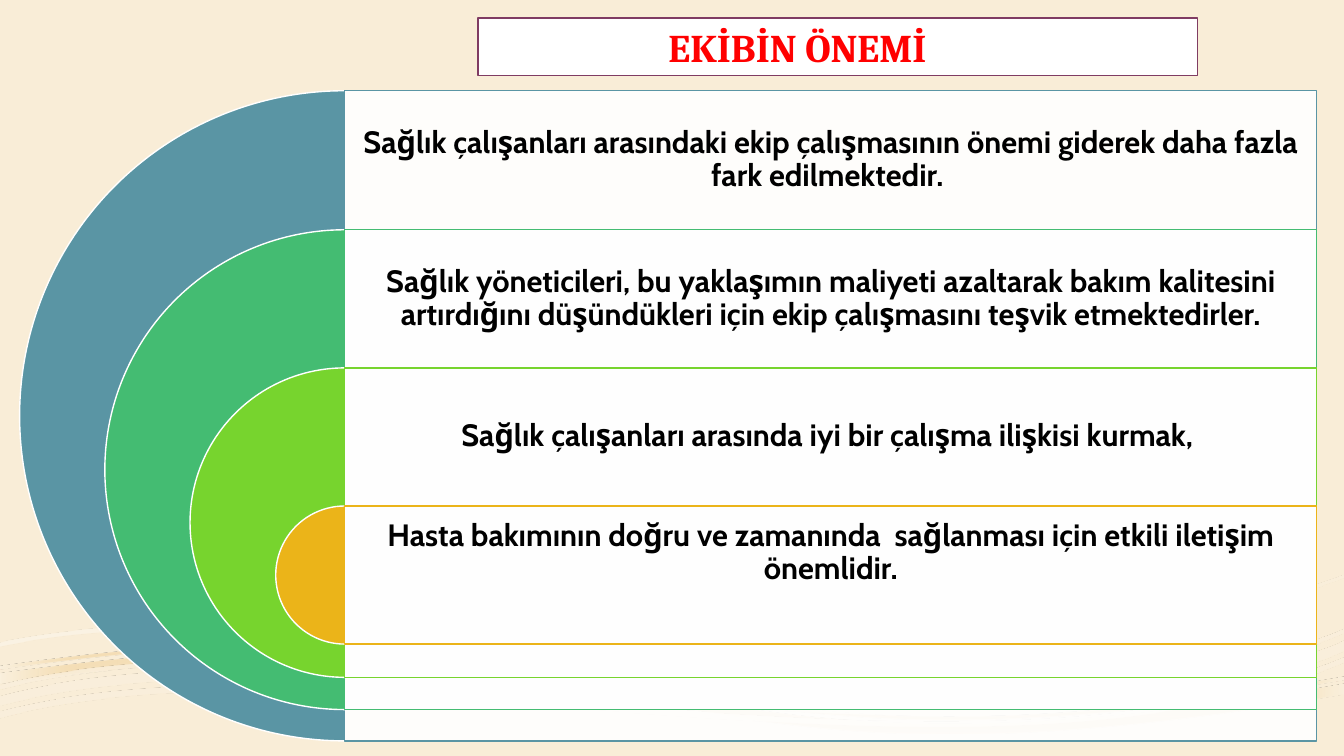
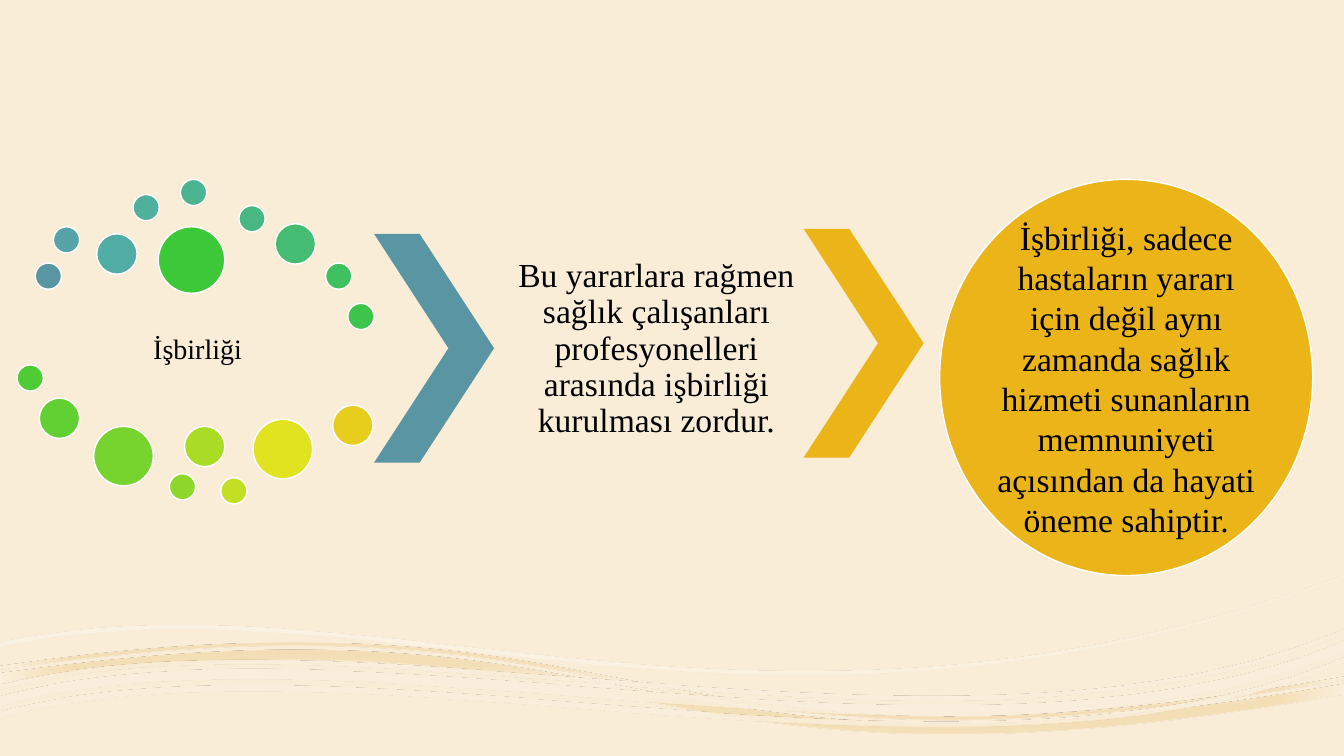
"""Build two slides on teamwork and its value in health care."""
from dataclasses import dataclass
from math import cos, radians, sin

from lxml import etree
from pptx import Presentation
from pptx.dml.color import RGBColor
from pptx.enum.shapes import MSO_SHAPE
from pptx.enum.text import MSO_ANCHOR, PP_ALIGN
from pptx.oxml import parse_xml
from pptx.oxml.ns import nsdecls, qn
from pptx.util import Pt

PX = 9144
TILT = 3.5
RECT, PIE = MSO_SHAPE.RECTANGLE, MSO_SHAPE.PIE
OVAL, CHEVRON = MSO_SHAPE.OVAL, MSO_SHAPE.CHEVRON
LEFT, CENTER = PP_ALIGN.LEFT, PP_ALIGN.CENTER
MIDDLE = MSO_ANCHOR.MIDDLE


@dataclass(frozen=True)
class Theme:
    """Hold the colours, fonts and type sizes."""
    sand: str = "F9EDD7"
    white: str = "FFFFFF"
    black: str = "000000"
    red: str = "FF0000"
    plum: str = "803C63"
    teal: str = "5A95A4"
    green: str = "44BC72"
    lime: str = "77D42E"
    gold: str = "EBB419"
    head: str = "Cambria"
    body: str = "Cabin"
    serif: str = "Times New Roman"
    title: int = 28
    large: int = 24
    main: int = 22
    small: int = 20


T = Theme()

WAVES = [
    ((1, 612, 1331, 135),
     [[(306, 645), (670, 647, 738, 782, 1333, 678), (1333, 688),
       (602, 816, 667, 583, 0, 678), (0, 668), (124, 651, 222, 644, 306, 645)],
      [(306, 638), (670, 640, 738, 775, 1333, 671), (1333, 674),
       (602, 802, 667, 569, 0, 664), (0, 661), (124, 643, 222, 637, 306, 638)]],
     [(0, "FAF1DF", 90), (18, "F4DEB7", 100), (37, "F4DDB3", 90), (100, "FAF1DF", 100)],
     '<a:path path="shape"><a:fillToRect l="50000" t="50000" r="50000" b="50000"/></a:path>'),
    ((3, 588, 1335, 171),
     [[(1333, 570), (1333, 573), (754, 788, 373, 563, 0, 641), (0, 637),
       (373, 559, 754, 784, 1333, 570)]],
     [(36, T.white, 30), (100, T.sand, 48)],
     '<a:lin ang="2700000" scaled="0"/>'),
    ((-1, 625, 1336, 115),
     [[(1333, 652), (1333, 657), (955, 815, 349, 618, 0, 712), (0, 706),
       (349, 612, 955, 810, 1333, 652)],
      [(1333, 636), (1333, 646), (955, 804, 349, 606, 0, 700), (0, 691),
       (349, 596, 955, 794, 1333, 636)],
      [(1333, 624), (1333, 628), (958, 790, 351, 593, 0, 684), (0, 680),
       (351, 589, 958, 786, 1333, 624)]],
     [(36, T.white, 47), (100, "FAEFDC", 82)],
     '<a:path path="rect"><a:fillToRect l="100000" t="100000"/></a:path>'),
]

RINGS = [
    (90, 645, T.teal, "Sağlık çalışanları arasındaki ekip çalışmasının önemi giderek "
                      "daha fazla fark edilmektedir. ", 9),
    (228, 476, T.green, "Sağlık yöneticileri, bu yaklaşımın maliyeti azaltarak bakım "
                        "kalitesini artırdığını düşündükleri için ekip çalışmasını "
                        "teşvik etmektedirler.", 9),
    (365, 307, T.lime, "Sağlık çalışanları arasında iyi bir çalışma ilişkisi kurmak, ", 9),
    (502, 137, T.gold, "Hasta bakımının doğru ve zamanında  sağlanması için etkili "
                       "iletişim önemlidir.", 52),
]

DOTS = [
    (35, 261, 26, T.teal), (53, 225, 26, "56A3A8"), (96, 232, 40, "52ACA6"),
    (132, 193, 26, "4FB09C"), (179, 178, 26, "4BB490"), (237, 204, 26, "47B882"),
    (273, 222, 40, T.green), (323, 261, 26, "40C05F"), (345, 301, 26, "3DC44B"),
    (157, 225, 66, "3DC839"), (17, 362, 26, "4ECC35"), (39, 395, 40, "62D032"),
    (93, 423, 59, T.lime), (168, 470, 26, "8FD82B"), (183, 423, 40, "A8DC27"),
    (219, 474, 26, "C3DF24"), (251, 416, 59, "E1E320"), (330, 402, 40, "E7CE1D"),
]


def rgb(code):
    """Turn a hex code into a colour."""
    return RGBColor.from_string(code)


def emu(box):
    """Scale px lengths to EMU."""
    return [round(n * PX) for n in box]


def shape(slide, kind, box, fill, line=None, adj=(), alpha=None):
    """Add a preset shape with a flat fill."""
    item = slide.shapes.add_shape(kind, *emu(box))
    item.shadow.inherit = False
    for i, value in enumerate(adj):
        item.adjustments[i] = value
    item.fill.solid()
    item.fill.fore_color.rgb = rgb(fill)
    if alpha:
        tint = item.element.spPr.find(qn("a:solidFill")).find(qn("a:srgbClr"))
        etree.SubElement(tint, qn("a:alpha"), val=str(alpha * 1000))
    if line:
        item.line.color.rgb = rgb(line)
        item.line.width = Pt(1)
    else:
        item.line.fill.background()
    return item


def write(item, words, size, font, color=T.black, bold=False, align=CENTER,
          pads=(0, 0, 0, 0), space=0.9):
    """Write one paragraph; pads run left, top, right, bottom."""
    frame = item.text_frame
    frame.word_wrap = True
    frame.vertical_anchor = MIDDLE
    (frame.margin_left, frame.margin_top,
     frame.margin_right, frame.margin_bottom) = emu(pads)
    para = frame.paragraphs[0]
    para.alignment = align
    para.line_spacing = space
    run = para.add_run()
    run.text = words
    run.font.size = Pt(size)
    run.font.name = font
    run.font.bold = bold
    run.font.color.rgb = rgb(color)


def text(slide, box, words, size, font, **style):
    """Add a text box."""
    write(slide.shapes.add_textbox(*emu(box)), words, size, font, **style)


def level(box, x, y):
    """Give a point's place in the box before the box is tilted."""
    left, top, wide, high = box
    turn = radians(TILT)
    dx, dy = x - left - wide / 2, y - top - high / 2
    return emu((wide / 2 + dx * cos(turn) - dy * sin(turn),
                high / 2 + dx * sin(turn) + dy * cos(turn)))


def curve(route, box, loops):
    """Draw closed loops of lines and cubic curves on a route."""
    for node in list(route):
        route.remove(node)
    for loop in loops:
        for i, part in enumerate(loop):
            name = "moveTo" if i == 0 else "lnTo" if len(part) == 2 else "cubicBezTo"
            step = etree.SubElement(route, qn("a:" + name))
            for spot in zip(part[::2], part[1::2]):
                x, y = level(box, *spot)
                etree.SubElement(step, qn("a:pt"), x=str(x), y=str(y))
        etree.SubElement(route, qn("a:close"))


def wave(slide, box, loops, stops, course):
    """Add a tilted ribbon of curves with a gradient."""
    left, top, wide, high = emu(box)
    right, foot = left + wide, top + high
    pen = slide.shapes.build_freeform(left, top)
    pen.add_line_segments([(right, top), (right, foot), (left, foot)])
    item = pen.convert_to_shape()
    item.shadow.inherit = False
    item.rotation = 360 - TILT
    props = item.element.spPr
    curve(next(props.iter(qn("a:path"))), box, loops)
    item.fill.background()
    marks = "".join(
        f'<a:gs pos="{pos * 1000}"><a:srgbClr val="{code}">'
        f'<a:alpha val="{alpha * 1000}"/></a:srgbClr></a:gs>'
        for pos, code, alpha in stops)
    blend = parse_xml(f'<a:gradFill {nsdecls("a")} rotWithShape="1">'
                      f'<a:gsLst>{marks}</a:gsLst>{course}</a:gradFill>')
    props.replace(props.find(qn("a:noFill")), blend)
    item.line.fill.background()


def page(deck):
    """Add a blank slide with the waves."""
    slide = deck.slides.add_slide(deck.slide_layouts[6])
    for ribbon in WAVES:
        wave(slide, *ribbon)
    return slide


def ring(slide, top, size, color, words, foot):
    """Add one nested half disc, its panel and its text."""
    mid, wide = 342, 964
    shape(slide, PIE, (mid - size / 2, top, size, size), color, T.white, (54, 162))
    shape(slide, RECT, (mid, top, wide, size), T.white, color, alpha=90)
    text(slide, (mid, top, wide, 137), words, T.main, T.body, bold=True,
         pads=(9, 9, 9, foot))


def value(deck):
    """Build the slide on why the team matters."""
    slide = page(deck)
    banner = shape(slide, RECT, (474, 18, 714, 57), T.white, T.plum)
    write(banner, "EKİBİN ÖNEMİ", T.title, T.head, T.red, True, LEFT,
          (189, 5, 10, 5), 1.0)
    for band in RINGS:
        ring(slide, *band)


def bond(deck):
    """Build the slide on working as one."""
    slide = page(deck)
    text(slide, (38, 260, 323, 107), "İşbirliği ", T.small, T.serif,
         pads=(4, 73, 4, 4))
    for left, top, size, color in DOTS:
        shape(slide, OVAL, (left, top, size, size), color, T.white)
    for left, top, color in ((371, 232, T.teal), (797, 227, T.gold)):
        shape(slide, CHEVRON, (left, top, 119, 227), color, adj=(0.62,))
    text(slide, (489, 233, 324, 227),
         "Bu yararlara rağmen sağlık çalışanları profesyonelleri arasında "
         "işbirliği kurulması zordur.", T.large, T.serif, pads=(3, 3, 3, 3))
    shape(slide, OVAL, (932, 178, 370, 393), T.gold, T.white)
    text(slide, (986, 236, 262, 278),
         "İşbirliği, sadece hastaların yararı için değil aynı zamanda sağlık "
         "hizmeti sunanların memnuniyeti açısından da hayati öneme sahiptir.",
         T.large, T.serif, space=1.0)


def main():
    """Build and save the deck."""
    deck = Presentation()
    deck.slide_width, deck.slide_height = emu((1333, 750))
    back = deck.slide_master.background.fill
    back.solid()
    back.fore_color.rgb = rgb(T.sand)
    value(deck)
    bond(deck)
    deck.save("out.pptx")


if __name__ == "__main__":
    main()
